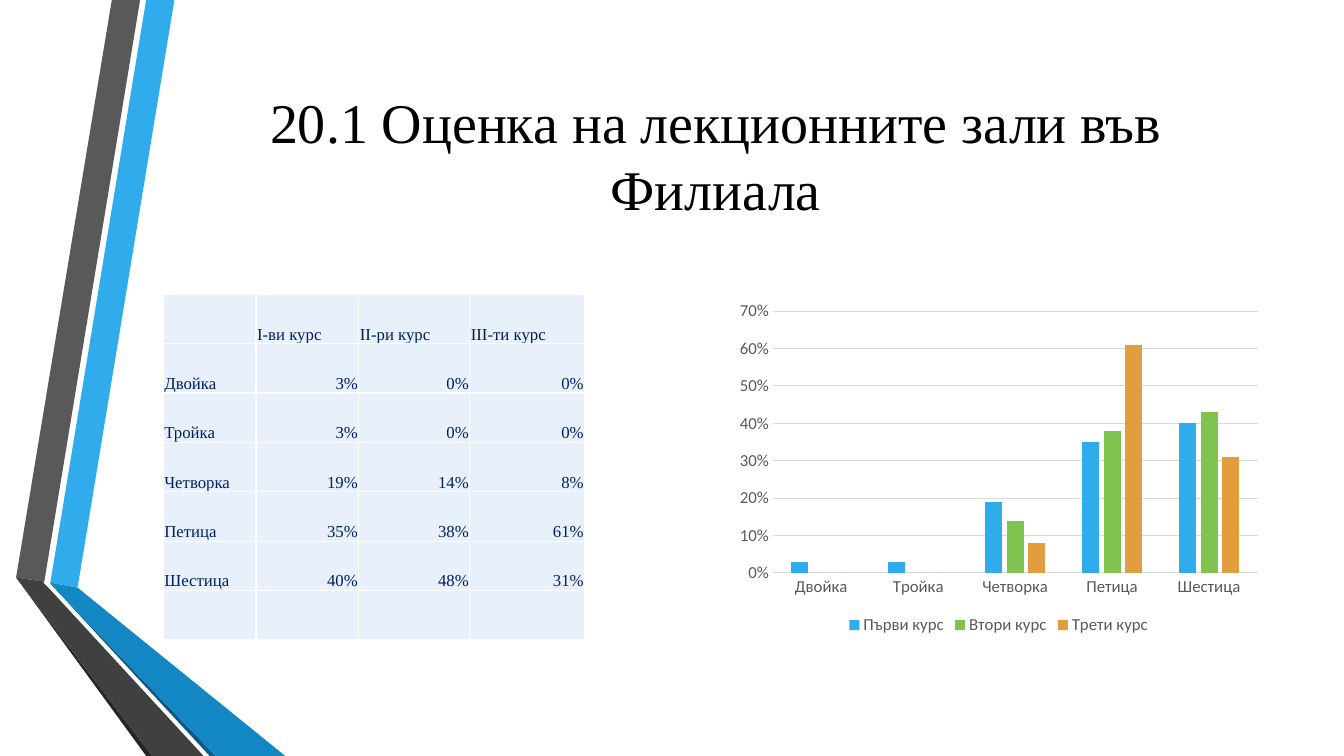
from dataclasses import dataclass

from lxml import etree
from pptx import Presentation
from pptx import util as u
from pptx.chart import data as chart_data
from pptx.dml.color import RGBColor
from pptx.enum import chart as charts
from pptx.enum import text
from pptx.oxml import ns


@dataclass(frozen=True)
class Theme:
    serif: str = "Times New Roman"
    sans: str = "Calibri"
    title_size: int = 40
    body_size: int = 12
    black: str = "000000"
    navy: str = "002060"
    white: str = "FFFFFF"
    cell: str = "E8F1FB"
    label: str = "595959"
    grid: str = "D9D9D9"
    series: tuple = ("30ACEC", "80C34F", "E29D3E")


RIBBONS = [
    ("30ACEC", [(0.5, 5.78), (0.77, 5.83), (1.73, 0), (1.45, 0)]),
    ("595959", [(1.39, 0), (1.11, 0), (0.16, 5.73), (0.44, 5.77)]),
    ("262626", [(0.16, 5.73), (1.45, 7.5), (1.51, 7.5)]),
    ("0C5A82", [(0.5, 5.79), (2.08, 7.5), (2.14, 7.5)]),
    ("1287C3", [(0.5, 5.79), (2.14, 7.5), (2.83, 7.5), (0.77, 5.83), (0.5, 5.78)]),
    ("404040", [(2.02, 7.5), (0.48, 5.83), (0.43, 5.78), (0.44, 5.77),
                (0.16, 5.73), (1.51, 7.5)]),
]
GRADES = ["Двойка", "Тройка", "Четворка", "Петица", "Шестица"]
TABLE_SHARES = [(3, 0, 0), (3, 0, 0), (19, 14, 8), (35, 38, 61), (40, 48, 31)]
GRADE_ROWS = [
    ["", "I-ви курс", "II-ри курс", "III-ти курс"],
    *([grade, *(f"{share}%" for share in shares)]
      for grade, shares in zip(GRADES, TABLE_SHARES)),
    [""] * 4,
]
COURSES = {
    "Първи курс": (0.03, 0.03, 0.19, 0.35, 0.4),
    "Втори курс": (0, 0, 0.14, 0.38, 0.43),
    "Трети курс": (0, 0, 0.08, 0.61, 0.31),
}


class SlideBuilder:
    """Draws styled elements on the current slide."""

    def __init__(self, slide, theme):
        self.slide = slide
        self.theme = theme

    def style(self, font, name, size, color):
        font.name = name
        font.size = u.Pt(size)
        font.color.rgb = RGBColor.from_string(color)

    def ribbon(self, color, corners):
        start, *rest = [(x * 100, y * 100) for x, y in corners]
        outline = self.slide.shapes.build_freeform(*start, scale=u.Inches(0.01))
        outline.add_line_segments(rest)
        band = outline.convert_to_shape()
        band.shadow.inherit = False
        band.fill.solid()
        band.fill.fore_color.rgb = RGBColor.from_string(color)
        band.line.fill.background()

    def title(self, wording, *box):
        frame = self.slide.shapes.add_textbox(*map(u.Inches, box)).text_frame
        frame.word_wrap = True
        frame.vertical_anchor = text.MSO_ANCHOR.MIDDLE
        heading = frame.paragraphs[0]
        heading.text = wording
        heading.alignment = text.PP_ALIGN.CENTER
        self.style(heading.font, self.theme.serif, self.theme.title_size,
                   self.theme.black)

    def borders(self, cell):
        properties = cell._tc.get_or_add_tcPr()
        for side in ("a:lnL", "a:lnR", "a:lnT", "a:lnB"):
            edge = etree.SubElement(properties, ns.qn(side), w=str(u.Pt(1)))
            fill = etree.SubElement(edge, ns.qn("a:solidFill"))
            etree.SubElement(fill, ns.qn("a:srgbClr"), val=self.theme.white)

    def cell(self, cell, wording, is_number):
        cell.margin_left = cell.margin_right = cell.margin_top = u.Inches(0.01)
        cell.margin_bottom = 0
        cell.vertical_anchor = text.MSO_ANCHOR.BOTTOM
        self.borders(cell)
        cell.fill.solid()
        cell.fill.fore_color.rgb = RGBColor.from_string(self.theme.cell)
        entry = cell.text_frame.paragraphs[0]
        if wording:
            entry.text = wording
        entry.alignment = text.PP_ALIGN.RIGHT if is_number else text.PP_ALIGN.LEFT
        self.style(entry.font, self.theme.serif, self.theme.body_size, self.theme.navy)
        entry.font.bold = False

    def table(self, rows, widths, row_height, left, top):
        size = (sum(widths), row_height * len(rows))
        grid = self.slide.shapes.add_table(
            len(rows), len(widths), *map(u.Inches, (left, top, *size))).table
        grid.first_row = grid.horz_banding = False
        for column, width in zip(grid.columns, widths):
            column.width = u.Inches(width)
        for r, row in enumerate(rows):
            grid.rows[r].height = u.Inches(row_height)
            for c, wording in enumerate(row):
                self.cell(grid.cell(r, c), wording, r > 0 and c > 0)

    def axis(self, axis):
        axis.major_tick_mark = axis.minor_tick_mark = charts.XL_TICK_MARK.NONE
        self.style(axis.tick_labels.font, self.theme.sans, self.theme.body_size,
                   self.theme.label)

    def hairline(self, line):
        line.width = u.Pt(0.75)
        line.color.rgb = RGBColor.from_string(self.theme.grid)

    def columns(self, categories, courses, *box):
        data = chart_data.CategoryChartData(number_format="0%")
        data.categories = categories
        for name, values in courses.items():
            data.add_series(name, values)
        chart = self.slide.shapes.add_chart(
            charts.XL_CHART_TYPE.COLUMN_CLUSTERED, *map(u.Inches, box), data).chart
        self.style(chart.font, self.theme.sans, 10, self.theme.black)
        chart.has_title = False

        plot = chart.plots[0]
        plot.gap_width = 219
        plot.overlap = -27
        plot.vary_by_categories = False
        for course, color in zip(plot.series, self.theme.series):
            course.format.fill.solid()
            course.format.fill.fore_color.rgb = RGBColor.from_string(color)

        grades, shares = chart.category_axis, chart.value_axis
        self.axis(grades)
        self.axis(shares)
        self.hairline(grades.format.line)
        self.hairline(shares.major_gridlines.format.line)
        shares.format.line.fill.background()
        shares.minimum_scale = 0
        shares.maximum_scale = 0.7
        shares.major_unit = 0.1
        shares.tick_labels.number_format = "0%"
        shares.tick_labels.number_format_is_linked = False

        chart.has_legend = True
        chart.legend.position = charts.XL_LEGEND_POSITION.BOTTOM
        chart.legend.include_in_layout = False
        self.style(chart.legend.font, self.theme.sans, self.theme.body_size,
                   self.theme.label)


def main():
    deck = Presentation()
    deck.slide_width = u.Inches(13.33)
    deck.slide_height = u.Inches(7.5)
    builder = SlideBuilder(deck.slides.add_slide(deck.slide_layouts[6]), Theme())
    for color, corners in RIBBONS:
        builder.ribbon(color, corners)
    builder.title("20.1 Оценка на лекционните зали във Филиала", 1.62, 0.57, 10.96, 1.92)
    builder.table(GRADE_ROWS, (0.92, 1.02, 1.1, 1.14), 0.49, 1.62, 2.92)
    builder.columns(GRADES, COURSES, 7.23, 2.92, 5.35, 3.42)
    deck.save("out.pptx")


if __name__ == "__main__":
    main()
